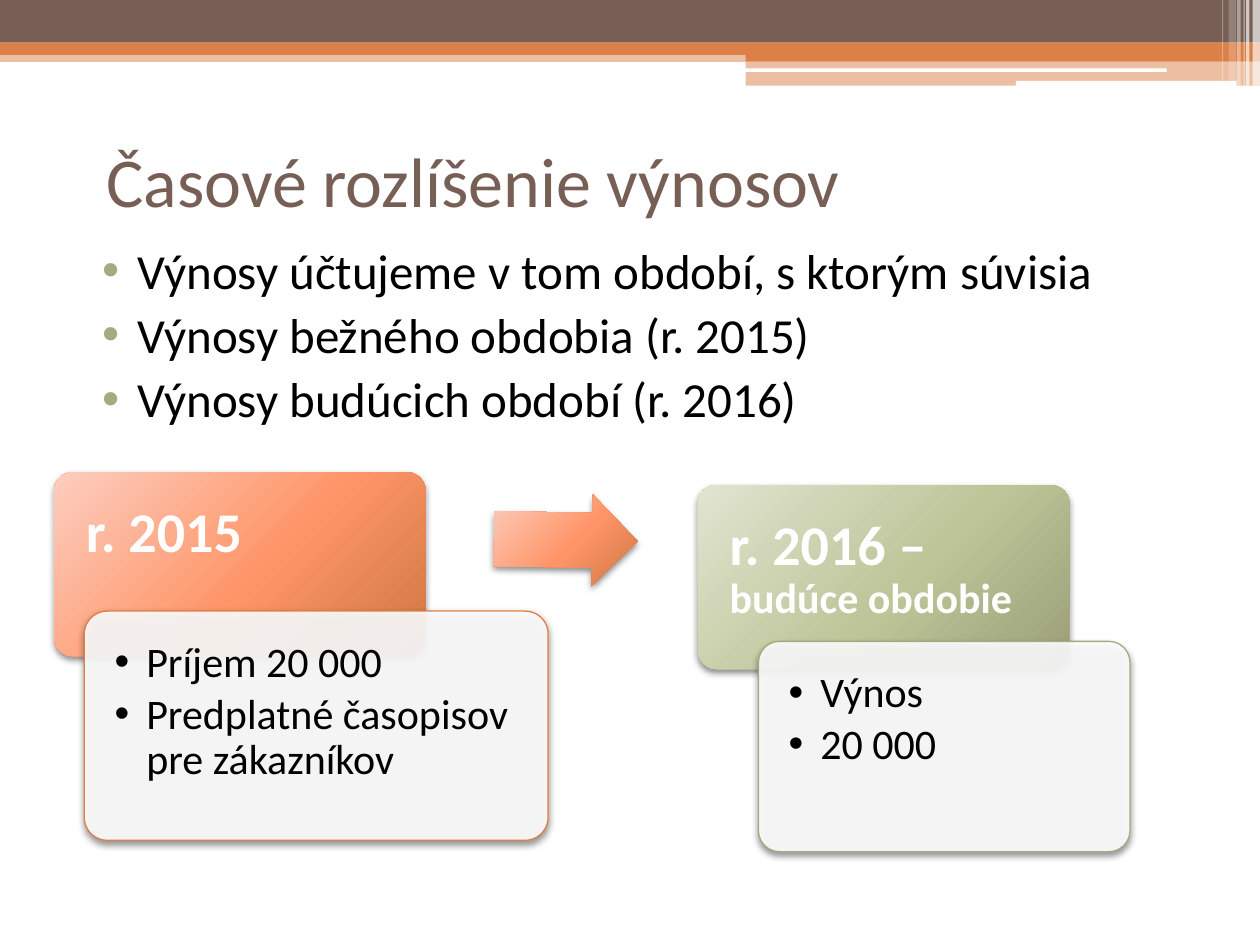
from lxml import etree
from pptx import Presentation
from pptx.dml.color import RGBColor
from pptx.enum.shapes import MSO_SHAPE
from pptx.enum.text import MSO_ANCHOR
from pptx.oxml.ns import qn
from pptx.util import Cm, Pt

RECT = MSO_SHAPE.RECTANGLE
ROUND = MSO_SHAPE.ROUNDED_RECTANGLE
ARROW = MSO_SHAPE.RIGHT_ARROW
TOP = MSO_ANCHOR.TOP
MIDDLE = MSO_ANCHOR.MIDDLE

WHITE = RGBColor(0xFF, 0xFF, 0xFF)
BLACK = RGBColor(0x00, 0x00, 0x00)
BROWN = RGBColor(0x77, 0x5F, 0x55)
ORANGE = RGBColor(0xDD, 0x80, 0x47)
GREEN = RGBColor(0xA5, 0xAB, 0x81)
WARM = (RGBColor(0xFD, 0xCE, 0xBF), RGBColor(0xFE, 0x95, 0x68), RGBColor(0xCE, 0x77, 0x42))
COOL = (RGBColor(0xE1, 0xE4, 0xD1), RGBColor(0xBE, 0xC5, 0x98), RGBColor(0x9A, 0x9F, 0x78))


def node(parent, tag, **attrs):
    return etree.SubElement(parent, qn(tag), {k: str(v) for k, v in attrs.items()})


class Deck:
    """Holds the text style and the current slide, and draws each kind of element."""

    font = "Calibri"
    stops = (0, 55, 100)

    def __init__(self, slide):
        self.slide = slide

    def shape(self, kind, box, adjust=()):
        shape = self.slide.shapes.add_shape(kind, *map(Cm, box))
        for i, value in enumerate(adjust):
            shape.adjustments[i] = value
        shape.line.fill.background()
        shape.shadow.inherit = False
        return shape

    def paint(self, shape, color, alpha=100):
        shape.fill.solid()
        shape.fill.fore_color.rgb = color
        if alpha < 100:
            tint = shape._element.spPr.find(qn("a:solidFill")).find(qn("a:srgbClr"))
            node(tint, "a:alpha", val=alpha * 1000)

    def blend(self, shape, colors):
        shape.fill.gradient()
        grad = shape._element.spPr.find(qn("a:gradFill"))
        grad.clear()
        grad.set("rotWithShape", "1")
        steps = node(grad, "a:gsLst")
        for stop, color in zip(self.stops, colors):
            node(node(steps, "a:gs", pos=stop * 1000), "a:srgbClr", val=color)
        ring = node(grad, "a:path", path="circle")
        node(ring, "a:fillToRect", l=-40000, t=-90000, r=140000, b=190000)

    def shade(self, shape):
        effects = shape._element.spPr.find(qn("a:effectLst"))
        cast = node(effects, "a:outerShdw", blurRad=Pt(4), dist=Pt(2), dir=5400000,
                    algn="ctr", rotWithShape=0)
        node(node(cast, "a:srgbClr", val=BLACK), "a:alpha", val=45000)

    def strip(self, box, color, alpha=100, kind=RECT):
        self.paint(self.shape(kind, box), color, alpha)

    def block(self, kind, box, colors, adjust, turn=0):
        shape = self.shape(kind, box, adjust)
        shape.rotation = turn
        self.blend(shape, colors)
        self.shade(shape)

    def bullet(self, para, indent, hang, color):
        props = para._p.get_or_add_pPr()
        props.set("marL", str(Cm(indent)))
        props.set("indent", str(-Cm(hang)))
        node(node(props, "a:buClr"), "a:srgbClr", val=color)
        node(props, "a:buFont", typeface="Arial")
        node(props, "a:buChar", char="•")

    def text(self, box, lines, size, color, bold=False, pad=(0.25, 0.13, 0.25, 0.13),
             anchor=TOP, mark=None, before=0, after=0, spacing=1.0):
        frame = self.slide.shapes.add_textbox(*map(Cm, box)).text_frame
        frame.word_wrap = True
        frame.vertical_anchor = anchor
        (frame.margin_left, frame.margin_top,
         frame.margin_right, frame.margin_bottom) = map(Cm, pad)
        for i, runs in enumerate(lines):
            para = frame.add_paragraph() if i else frame.paragraphs[0]
            if mark:
                self.bullet(para, *mark)
            para.line_spacing = spacing
            para.space_before, para.space_after = Pt(before), Pt(after)
            font = para.font
            font.name, font.size, font.bold = self.font, Pt(size), bold
            font.color.rgb = color
            for words, own in runs:
                run = para.add_run()
                run.text = words
                if own:
                    run.font.size = Pt(own)

    def card(self, left, top, colors, label, box, edge, items):
        self.block(ROUND, (left, top, 7.49, 3.71), colors, [0.1])
        self.text((left, top, 7.49, 2.49), [label], 32, WHITE, True,
                  (0.64, 0.64, 0.64, 0.32), after=11.2, spacing=0.9)
        panel = self.shape(ROUND, box, [0.1])
        self.paint(panel, WHITE, 90)
        panel.line.color.rgb = edge
        panel.line.width = Pt(0.75)
        self.shade(panel)
        x, y, w, h = box
        self.text((x + 0.13, y + 0.13, w - 0.26, h - 0.26), plain(items), 24, BLACK,
                  pad=(0.48,) * 4, mark=(0.64, 0.64, BLACK), after=3.6, spacing=0.9)


def plain(items):
    return [[(item, None)] for item in items]


def main():
    show = Presentation()
    show.slide_width, show.slide_height = Cm(25.4), Cm(19.05)
    deck = Deck(show.slides.add_slide(show.slide_layouts[6]))

    for box, color, alpha in (
        ((0, 1.02, 25.4, 0.23), ORANGE, 50),
        ((0, 0, 25.4, 0.86), BROWN, 100),
        ((0, 0.86, 25.4, 0.25), ORANGE, 100),
        ((15.03, 1, 10.37, 0.23), ORANGE, 100),
        ((15.03, 1.23, 10.37, 0.5), ORANGE, 50),
    ):
        deck.strip(box, color, alpha)
    for box in ((15.01, 1.38, 8.51, 0.07), (20.48, 1.63, 4.45, 0.1)):
        deck.strip(box, WHITE, kind=ROUND)
    for left, width, height, alpha in (
        (25.25, 0.15, 1.73, 65), (25.12, 0.07, 1.73, 65), (25.07, 0.02, 1.73, 60),
        (24.94, 0.07, 1.73, 40), (24.77, 0.15, 1.63, 20), (24.64, 0.02, 1.63, 30),
    ):
        deck.strip((left, 0, width, height), WHITE, alpha)

    deck.text((1.9, 2.13, 22.86, 2.97), plain(["Časové rozlíšenie výnosov"]), 40, BROWN,
              anchor=MIDDLE)
    deck.text((1.5, 4.72, 22.86, 3.81), plain([
        "Výnosy účtujeme v tom období, s ktorým súvisia",
        "Výnosy bežného obdobia (r. 2015)",
        "Výnosy budúcich období (r. 2016)",
    ]), 28, BLACK, mark=(1.02, 0.71, GREEN), before=3)

    deck.card(1.09, 9.52, WARM, [("r. 2015", None)], (1.7, 12.32, 9.35, 4.62), ORANGE,
              ["Príjem 20 000", "Predplatné časopisov pre zákazníkov"])
    deck.block(ARROW, (9.96, 9.96, 2.9, 1.85), WARM, [0.6, 0.5], 1.1)
    deck.card(14.07, 9.78, COOL, [("r. 2016 – ", 32), ("budúce obdobie", 24)],
              (15.29, 12.93, 7.49, 4.24), GREEN, ["Výnos", "20 000"])
    show.save("out.pptx")


if __name__ == "__main__":
    main()
